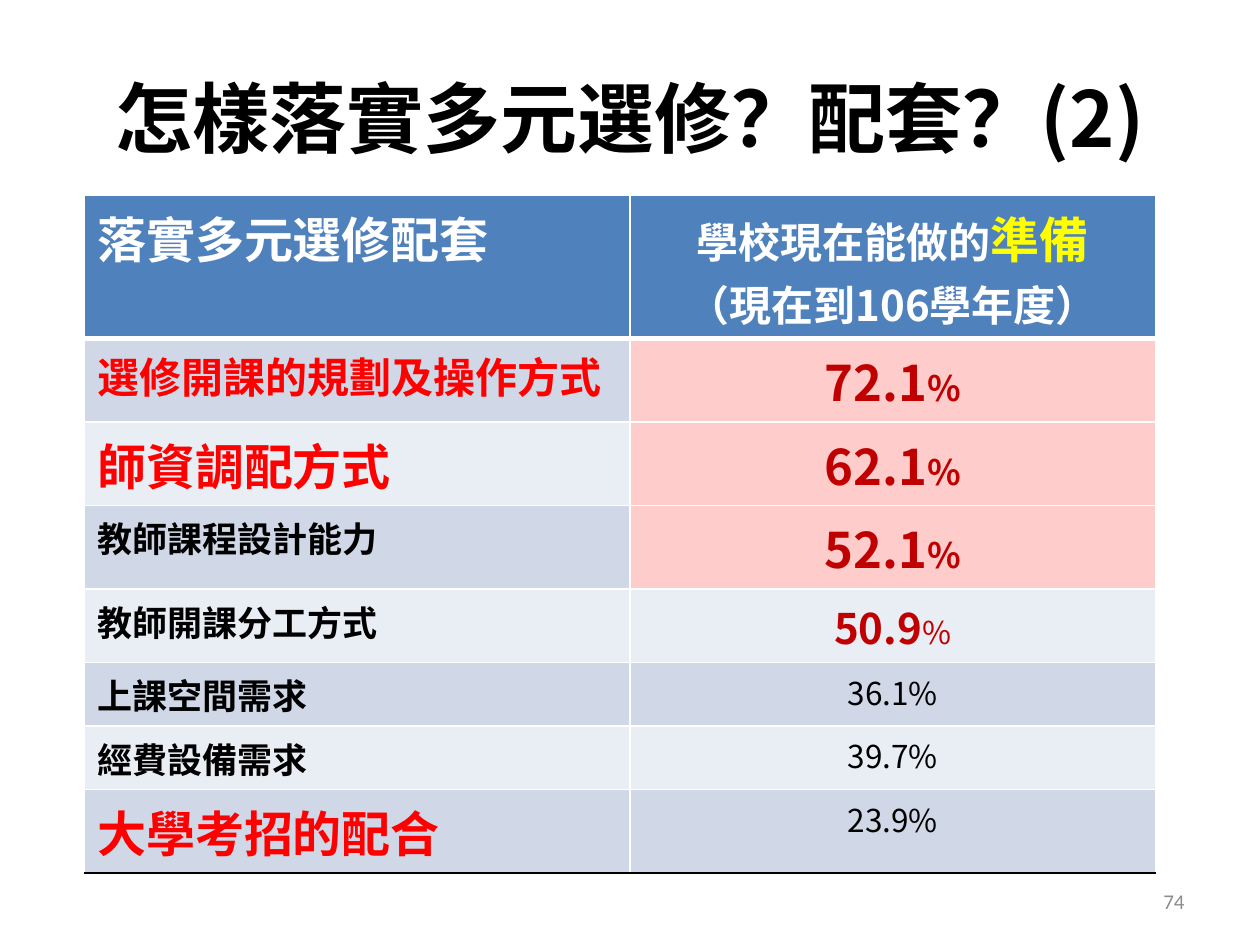
from dataclasses import dataclass

from lxml.etree import SubElement
from pptx import Presentation
from pptx.dml.color import RGBColor as RGB
from pptx.enum.text import MSO_ANCHOR as Anchor, PP_ALIGN as Align
from pptx.oxml import parse_xml
from pptx.oxml.ns import nsdecls, qn
from pptx.util import Pt


@dataclass(frozen=True)
class Theme:
    cjk: str = "Noto Sans CJK SC"
    latin: str = "Calibri"
    black: str = "000000"
    white: str = "FFFFFF"
    gray: str = "8C8C8C"
    red: str = "FF0000"
    dark: str = "C00000"
    yellow: str = "FFFF00"
    blue: str = "4F81BD"
    pink: str = "FFCCCC"
    bands: tuple = ("D0D8E8", "E9EDF4")
    title: int = 44
    big: int = 28
    mid: int = 24
    body: int = 20
    small: int = 18
    note: int = 12


T = Theme()
COLS = (311.5, 300.5)
HEAD = 82
# Label, its size and colour, figure, its size, size of the % sign, row height
ROWS = (
    ("選修開課的規劃及操作方式", T.mid, T.red, "72.1", T.big, T.body, 47.7),
    ("師資調配方式", T.big, T.red, "62.1", T.big, T.body, 47.7),
    ("教師課程設計能力", T.body, T.black, "52.1", T.big, T.body, 47.7),
    ("教師開課分工方式", T.body, T.black, "50.9", T.mid, T.small, 42),
    ("上課空間需求", T.body, T.black, "36.1", T.small, T.small, 36.3),
    ("經費設備需求", T.body, T.black, "39.7", T.small, T.small, 36.3),
    ("大學考招的配合", T.big, T.red, "23.9", T.small, T.small, 47.7),
)


def write(para, parts, align=Align.LEFT, face=T.cjk):
    """Fill a paragraph with (text, size, colour, bold) runs."""
    para.alignment = align
    for text, size, color, bold in parts:
        run = para.add_run()
        run.text = text
        font = run.font
        font.size, font.bold, font.name = Pt(size), bold, face
        font.color.rgb = RGB.from_string(color)
        SubElement(font._element, qn("a:ea")).set("typeface", face)


def add_text(slide, box, parts, align, face=T.cjk):
    frame = slide.shapes.add_textbox(*map(Pt, box)).text_frame
    frame.word_wrap = True
    frame.vertical_anchor = Anchor.MIDDLE
    write(frame.paragraphs[0], parts, align, face)


def paint(cell, color, base=(T.white, 1)):
    """Set a cell's fill and borders; base is the bottom line."""
    cell.fill.solid()
    cell.fill.fore_color.rgb = RGB.from_string(color)
    thin = (T.white, 1)
    edges = {"L": thin, "R": thin, "T": thin, "B": base}
    props = cell._tc.get_or_add_tcPr()
    for i, (side, (tint, width)) in enumerate(edges.items()):
        props.insert(i, parse_xml(
            f'<a:ln{side} {nsdecls("a")} w="{Pt(width)}"><a:solidFill>'
            f'<a:srgbClr val="{tint}"/></a:solidFill></a:ln{side}>'))


def add_head(left, right):
    for cell in (left, right):
        paint(cell, T.blue, (T.white, 3))
    write(left.text_frame.paragraphs[0],
          [("落實多元選修配套", T.big, T.white, True)])
    frame = right.text_frame
    write(frame.paragraphs[0], [("學校現在能做的", T.mid, T.white, True),
                                ("準備", T.big, T.yellow, True)], Align.CENTER)
    write(frame.add_paragraph(),
          [("（現在到106學年度）", T.mid, T.white, True)], Align.CENTER)


def add_row(left, right, row, band, base):
    label, size, color, value, num, sign, _ = row
    paint(left, band, base)
    paint(right, T.pink if num == T.big else band, base)
    write(left.text_frame.paragraphs[0], [(label, size, color, True)])
    if num == sign:
        parts = [(value + "%", num, T.black, False)]
    else:
        parts = [(value, num, T.dark, True),
                 ("%", sign, T.dark, num == T.big)]
    write(right.text_frame.paragraphs[0], parts, Align.CENTER)


def add_grid(slide, box):
    table = slide.shapes.add_table(len(ROWS) + 1, len(COLS),
                                   *map(Pt, box)).table
    for col, width in zip(table.columns, COLS):
        col.width = Pt(width)
    for line, height in zip(table.rows, [HEAD] + [r[-1] for r in ROWS]):
        line.height = Pt(height)
    add_head(*table.rows[0].cells)
    for i, row in enumerate(ROWS):
        base = (T.black if row is ROWS[-1] else T.white, 1)
        add_row(*table.rows[i + 1].cells, row, T.bands[i % 2], base)


def main():
    deck = Presentation()
    deck.slide_width, deck.slide_height = Pt(720), Pt(540)
    slide = deck.slides.add_slide(deck.slide_layouts[6])
    add_text(slide, (36, 21.6, 648, 90),
             [("怎樣落實多元選修？配套？(2)", T.title, T.black, True)],
             Align.CENTER)
    add_grid(slide, (48.4, 111.6, sum(COLS), HEAD + sum(r[-1] for r in ROWS)))
    add_text(slide, (516, 500.5, 168, 28.75),
             [("74", T.note, T.gray, False)], Align.RIGHT, T.latin)
    deck.save("out.pptx")


if __name__ == "__main__":
    main()
